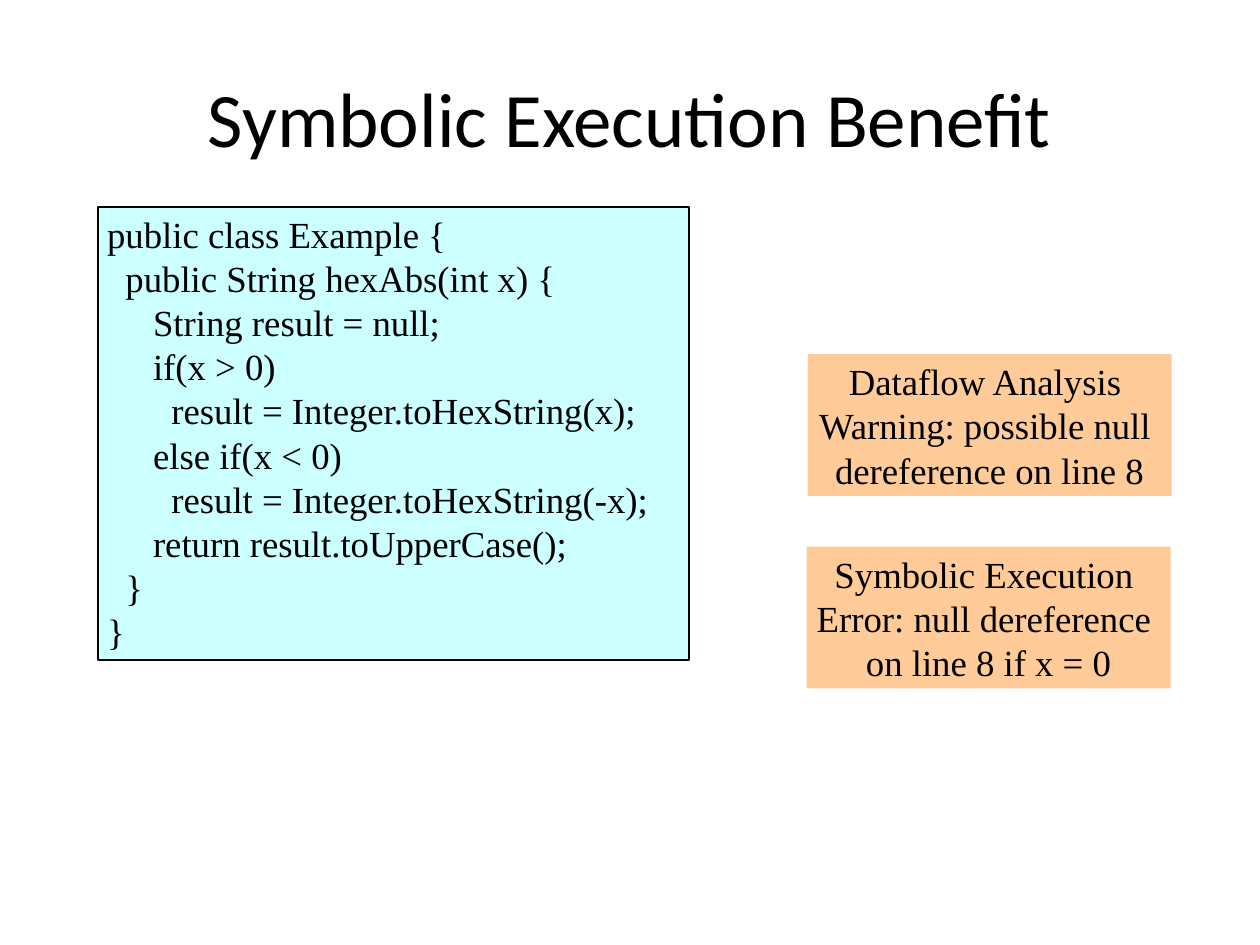
"""Build the slide comparing dataflow analysis with symbolic execution."""
import pptx
import pptx.dml.color
import pptx.enum.shapes
import pptx.enum.text
import pptx.util

Cm = pptx.util.Cm
Pt = pptx.util.Pt
RGBColor = pptx.dml.color.RGBColor
ALIGN = pptx.enum.text.PP_ALIGN

BLACK = RGBColor(0x00, 0x00, 0x00)
CODE_FILL = RGBColor(0xCC, 0xFF, 0xFF)
FINDING_FILL = RGBColor(0xFF, 0xCC, 0x99)

CODE_LINES = [
    (0, "public class Example {"),
    (2, "public String hexAbs(int x) {"),
    (5, "String result = null;"),
    (5, "if(x > 0)"),
    (7, "result = Integer.toHexString(x);"),
    (5, "else if(x < 0)"),
    (7, "result = Integer.toHexString(-x);"),
    (5, "return result.toUpperCase();"),
    (2, "}"),
    (0, "}"),
]

FINDINGS = [
    (16.28, 7.14, ["Dataflow Analysis ",
                   "Warning: possible null \vdereference on line 8"]),
    (16.26, 11.02, ["Symbolic Execution ",
                    "Error: null dereference \von line 8 if x = 0"]),
]


def write_text(paragraph, text, font="Times New Roman", size=21,
               align=ALIGN.LEFT, indent=0):
    paragraph.text = text
    paragraph.alignment = align
    if indent:
        properties = paragraph._p.get_or_add_pPr()
        properties.set("marL", str(Pt(indent * size / 4)))
        properties.set("indent", "0")
    for run in paragraph.runs:
        run.font.name = font
        run.font.size = Pt(size)
        run.font.color.rgb = BLACK


class SlideBuilder:
    def __init__(self, presentation):
        self.slide = presentation.slides.add_slide(presentation.slide_layouts[5])

    def title(self, text):
        title = self.slide.shapes.title
        title.left, title.top = Cm(1.27), Cm(0.76)
        title.width, title.height = Cm(22.86), Cm(3.18)
        title.text_frame.vertical_anchor = pptx.enum.text.MSO_ANCHOR.MIDDLE
        write_text(title.text_frame.paragraphs[0], text, font="Calibri",
                   size=44, align=ALIGN.CENTER)

    def box(self, left, top, width, height, lines, fill, outlined=False,
            wrap=True, align=ALIGN.LEFT):
        shape = self.slide.shapes.add_shape(
            pptx.enum.shapes.MSO_SHAPE.RECTANGLE,
            Cm(left), Cm(top), Cm(width), Cm(height))
        shape.shadow.inherit = False
        shape.fill.solid()
        shape.fill.fore_color.rgb = fill
        if outlined:
            shape.line.color.rgb = BLACK
            shape.line.width = Pt(1)
        else:
            shape.line.fill.background()
        frame = shape.text_frame
        frame.word_wrap = wrap
        frame.auto_size = pptx.enum.text.MSO_AUTO_SIZE.SHAPE_TO_FIT_TEXT
        frame.vertical_anchor = pptx.enum.text.MSO_ANCHOR.TOP
        frame.margin_left = frame.margin_right = Cm(0.18)
        frame.margin_top = frame.margin_bottom = Cm(0.1)
        for index, (indent, text) in enumerate(lines):
            paragraph = frame.add_paragraph() if index else frame.paragraphs[0]
            write_text(paragraph, text, align=align, indent=indent)

    def code(self, lines):
        self.box(1.98, 4.17, 11.91, 9.14, lines, CODE_FILL, outlined=True)

    def finding(self, left, top, lines):
        self.box(left, top, 7.34, 2.86, [(0, line) for line in lines],
                 FINDING_FILL, wrap=False, align=ALIGN.CENTER)


def main():
    presentation = pptx.Presentation()
    presentation.slide_width = Cm(25.4)
    presentation.slide_height = Cm(19.05)
    builder = SlideBuilder(presentation)
    builder.title("Symbolic Execution Benefit")
    builder.code(CODE_LINES)
    for left, top, lines in FINDINGS:
        builder.finding(left, top, lines)
    presentation.save("out.pptx")


if __name__ == "__main__":
    main()
